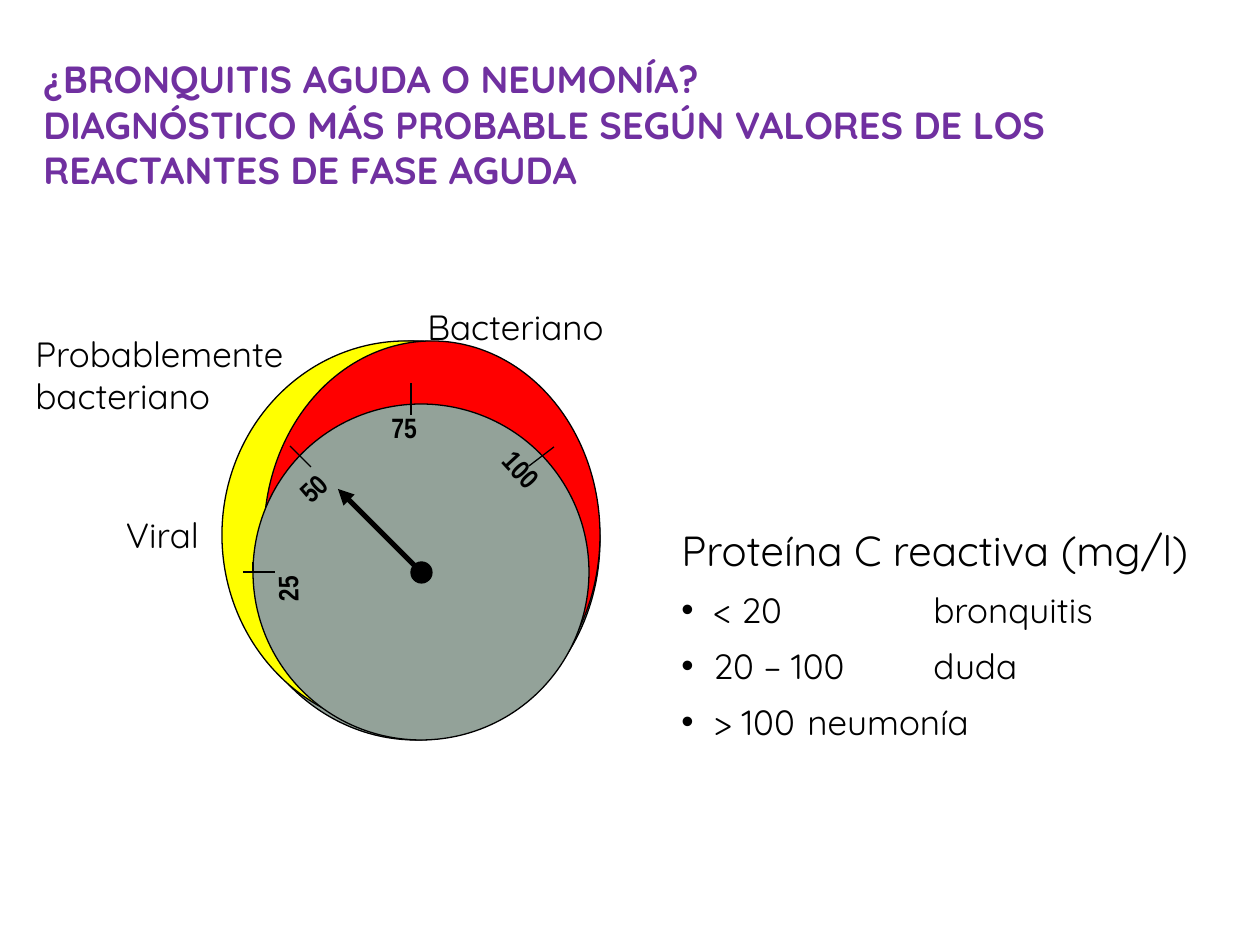
from dataclasses import dataclass

from lxml.etree import SubElement
from pptx import Presentation
from pptx.dml.color import RGBColor
from pptx.enum.shapes import MSO_CONNECTOR as Connector, MSO_SHAPE as Shape
from pptx.enum.text import MSO_ANCHOR as Anchor, PP_ALIGN as Align
from pptx.oxml.ns import qn
from pptx.util import Pt

EMU_PER_PX = 914400 / 126


def px(length):
    return round(length * EMU_PER_PX)


@dataclass(frozen=True)
class Theme:
    ink: str = "000000"
    title: str = "7030A0"
    dial: str = "93A299"
    probable: str = "FFFF00"
    bacterial: str = "FF0000"
    font: str = "Quicksand"
    dial_font: str = "Arial Narrow"
    title_size: float = 21.6
    heading_size: int = 24
    body_size: int = 20
    dial_size: int = 16
    thin: float = 0.75
    thick: float = 3


class SlideBuilder:
    def __init__(self, presentation, theme):
        self.theme = theme
        self.slide = presentation.slides.add_slide(presentation.slide_layouts[6])

    def ellipse(self, left, top, width, height, color):
        shape = self.slide.shapes.add_shape(
            Shape.OVAL, px(left), px(top), px(width), px(height))
        shape.shadow.inherit = False
        shape.fill.solid()
        shape.fill.fore_color.rgb = RGBColor.from_string(color)
        shape.line.color.rgb = RGBColor.from_string(self.theme.ink)
        shape.line.width = Pt(self.theme.thin)

    def line(self, x1, y1, x2, y2, width=None, arrow=False):
        line = self.slide.shapes.add_connector(
            Connector.STRAIGHT, px(x1), px(y1), px(x2), px(y2))
        line.line.color.rgb = RGBColor.from_string(self.theme.ink)
        line.line.width = Pt(width or self.theme.thin)
        if arrow:
            SubElement(line.line._get_or_add_ln(), qn("a:tailEnd"), type="triangle")
        SubElement(line._element.spPr, qn("a:effectLst"))

    def text_box(self, left, top, width, height, anchor=Anchor.TOP, rotation=0):
        box = self.slide.shapes.add_textbox(px(left), px(top), px(width), px(height))
        box.rotation = rotation
        box.text_frame.word_wrap = True
        box.text_frame.vertical_anchor = anchor
        return box.text_frame

    def run(self, paragraph, text, size, color=None, font=None, bold=False):
        run = paragraph.add_run()
        run.text = text
        run.font.size = Pt(size)
        run.font.name = font or self.theme.font
        run.font.bold = bold
        run.font.color.rgb = RGBColor.from_string(color or self.theme.ink)

    def title(self, lines, *place):
        paragraph = self.text_box(*place, anchor=Anchor.MIDDLE).paragraphs[0]
        for index, text in enumerate(lines):
            if index:
                paragraph.add_line_break()
            self.run(paragraph, text, self.theme.title_size, self.theme.title, bold=True)

    def label(self, text, *place, align=Align.CENTER):
        paragraph = self.text_box(*place).paragraphs[0]
        paragraph.alignment = align
        self.run(paragraph, text, self.theme.body_size)

    def dial_number(self, text, left, top, rotation):
        paragraph = self.text_box(left, top, 73, 47, rotation=rotation).paragraphs[0]
        self.run(paragraph, text, self.theme.dial_size,
                 font=self.theme.dial_font, bold=True)

    def bullet(self, paragraph, indent, tab):
        """Hang the paragraph on a bullet and set its one tab stop."""
        properties = paragraph._p.get_or_add_pPr()
        properties.set("marL", str(px(indent)))
        properties.set("indent", str(-px(indent)))
        SubElement(properties, qn("a:buFont"), typeface="Arial")
        SubElement(properties, qn("a:buChar"), char="•")
        stops = SubElement(properties, qn("a:tabLst"))
        SubElement(stops, qn("a:tab"), pos=str(px(tab)), algn="l")

    def value_list(self, heading, rows, *place):
        frame = self.text_box(*place)
        self.run(frame.paragraphs[0], heading, self.theme.heading_size)
        for value, meaning, tab in rows:
            paragraph = frame.add_paragraph()
            self.run(paragraph, f"{value}\t{meaning}", self.theme.body_size)
        for paragraph in frame.paragraphs:
            paragraph.space_before = paragraph.space_after = Pt(4)
        for paragraph, (_, _, tab) in zip(frame.paragraphs[1:], rows):
            self.bullet(paragraph, 32, tab)


def main():
    presentation = Presentation()
    presentation.slide_width, presentation.slide_height = px(1260), px(945)
    theme = Theme()
    builder = SlideBuilder(presentation, theme)

    for ring in ((232, 341, 368, 399, theme.dial),
                 (222, 341, 368, 388, theme.probable),
                 (264, 341, 336, 388, theme.bacterial)):
        builder.ellipse(*ring)
    builder.title(("¿BRONQUITIS AGUDA O NEUMONÍA?",
                   "DIAGNÓSTICO MÁS PROBABLE SEGÚN VALORES DE LOS "
                   "REACTANTES DE FASE AGUDA"), 31, 45, 1194, 158)

    builder.ellipse(253, 404, 336, 336, theme.dial)
    builder.line(421, 572, 338, 489, theme.thick, arrow=True)
    for tick in ((253, 572, 253, 562), (411, 383, 411, 415), (554, 447, 529, 466),
                 (290, 446, 311, 467), (243, 572, 275, 572)):
        builder.line(*tick)
    for number in (("75", 379, 404, 0), ("100", 488, 450, 47.3),
                   ("50", 285, 457, 316.3), ("25", 251, 554, 268.9)):
        builder.dial_number(*number)
    builder.ellipse(411, 562, 21, 21, theme.ink)

    builder.label("Viral", 26, 507, 273, 55)
    builder.label("Probablemente bacteriano", 23, 326, 300, 97, align=Align.LEFT)
    builder.label("Bacteriano", 379, 299, 273, 55)
    builder.value_list("Proteína C reactiva (mg/l)",
                       (("< 20", "bronquitis", 252),
                        ("20 – 100", "duda", 252),
                        ("> 100", "neumonía", 126)), 669, 518, 596, 243)

    presentation.save("out.pptx")


if __name__ == "__main__":
    main()
